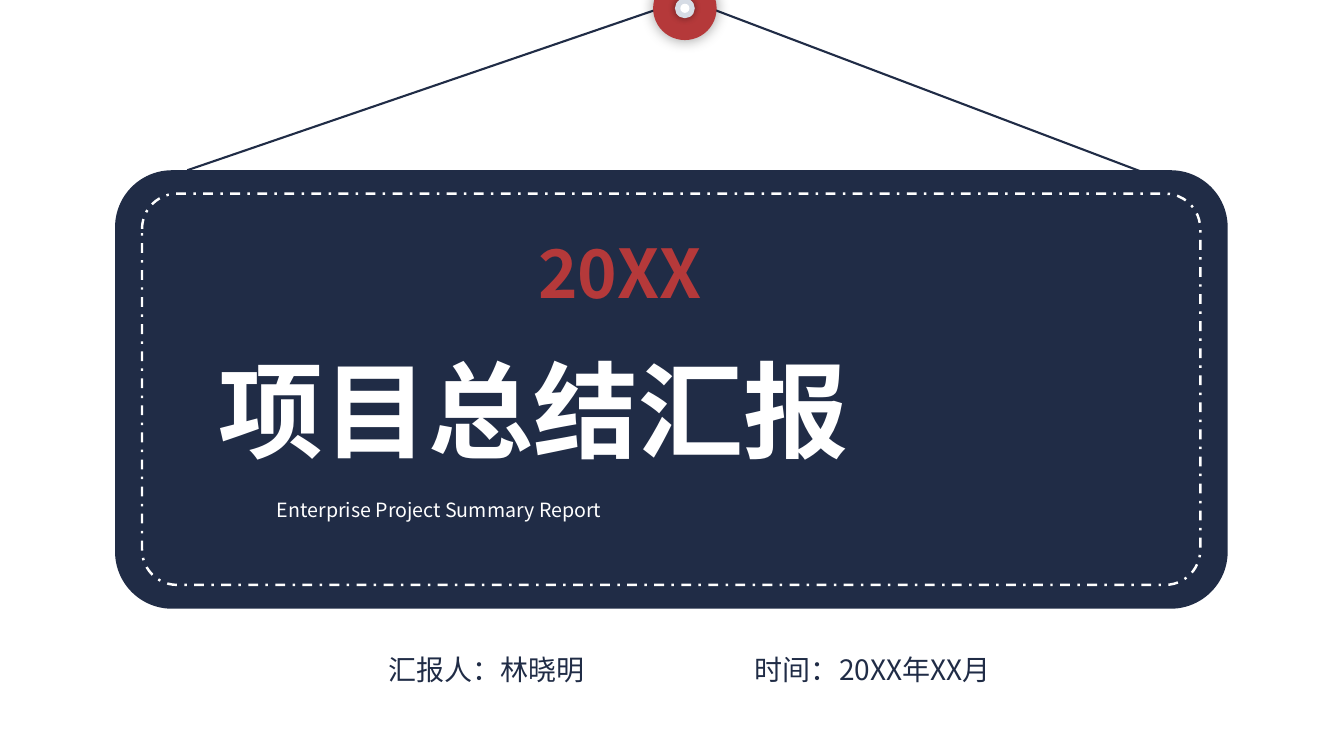
from lxml.etree import SubElement
from pptx import Presentation
from pptx.dml.color import RGBColor
from pptx.enum.dml import MSO_LINE
from pptx.enum.shapes import MSO_CONNECTOR, MSO_SHAPE
from pptx.enum.text import MSO_ANCHOR, MSO_AUTO_SIZE, PP_ALIGN
from pptx.oxml.ns import qn
from pptx.util import Cm, Pt

COLORS = {"navy": "202C46", "red": "B5393A", "white": "FFFFFF",
          "silver": "D6DCE5", "black": "000000"}


class Board:
    font = "Noto Sans CJK SC"

    def __init__(self, deck):
        self.page = deck.slides.add_slide(deck.slide_layouts[5])

    def color(self, name):
        return RGBColor.from_string(COLORS[name])

    def shape(self, kind, left, top, width, height, fill=None, radius=None):
        box = self.page.shapes.add_shape(
            kind, Cm(left), Cm(top), Cm(width), Cm(height))
        box.shadow.inherit = False
        box.line.fill.background()
        if fill:
            box.fill.solid()
            box.fill.fore_color.rgb = self.color(fill)
        else:
            box.fill.background()
        if radius:
            box.adjustments[0] = radius
        return box

    def outline(self, box, color, width, dash):
        box.line.color.rgb = self.color(color)
        box.line.width = Pt(width)
        box.line.dash_style = dash

    def glow(self, box, blur, opacity):
        effects = box.element.spPr.find(qn("a:effectLst"))
        shadow = SubElement(effects, qn("a:outerShdw"), blurRad=str(Pt(blur)),
                            dist="0", dir="0", algn="ctr", rotWithShape="0")
        tint = SubElement(shadow, qn("a:srgbClr"), val=COLORS["black"])
        SubElement(tint, qn("a:alpha"), val=str(opacity * 1000))

    def string(self, start, end):
        points = [Cm(value) for value in start + end]
        line = self.page.shapes.add_connector(MSO_CONNECTOR.STRAIGHT, *points)
        line.line.color.rgb = self.color("navy")
        line.line.width = Pt(1.5)
        SubElement(line.element.spPr, qn("a:effectLst"))

    def letter(self, box, text, size, color, bold=False,
               align=PP_ALIGN.JUSTIFY):
        frame = box.text_frame
        frame.word_wrap = True
        frame.auto_size = MSO_AUTO_SIZE.NONE
        frame.vertical_anchor = MSO_ANCHOR.MIDDLE
        frame.margin_top = frame.margin_bottom = 0
        para = frame.paragraphs[0]
        para.alignment = align
        span = para.add_run()
        span.text = text
        span.font.size = Pt(size)
        span.font.bold = bold
        span.font.color.rgb = self.color(color)
        span.font.name = self.font
        properties = span.font.fill._xPr
        SubElement(properties, qn("a:ea"), typeface=self.font)

    def label(self, left, top, width, height, *words, **style):
        box = self.page.shapes.add_textbox(
            Cm(left), Cm(top), Cm(width), Cm(height))
        self.letter(box, *words, **style)

    def title(self, left, top, width, height, *words, **style):
        box = self.page.shapes.title
        box.left, box.top = Cm(left), Cm(top)
        box.width, box.height = Cm(width), Cm(height)
        self.letter(box, *words, **style)
        return box


def main():
    deck = Presentation()
    deck.slide_width, deck.slide_height = Cm(33.87), Cm(19.05)
    board = Board(deck)

    board.shape(MSO_SHAPE.ROUNDED_RECTANGLE, 2.9, 4.29, 28.04, 11.05,
                "navy", 0.13)
    stitching = board.shape(MSO_SHAPE.ROUNDED_RECTANGLE,
                            3.58, 4.88, 26.67, 9.86, radius=0.09)
    board.outline(stitching, "white", 1.75, MSO_LINE.DASH_DOT)

    heading = board.title(5.26, 8.58, 23.34, 3.45,
                          "项目总结汇报", 75, "white", bold=True)
    stitching.element.addnext(heading.element)
    board.label(13.31, 5.7, 7.26, 2.31, "20XX", 48, "red", bold=True)
    board.label(6.73, 12.42, 20.37, 0.86,
                "Enterprise Project Summary Report", 14, "white")
    for left, width, text in ((7.95, 8.61, "汇报人：林晓明"),
                              (16.66, 10.67, "时间：20XX年XX月")):
        board.label(left, 16.31, width, 1.12, text, 20, "navy",
                    align=PP_ALIGN.CENTER)

    board.string((4.72, 4.29), (17.25, 0))
    board.string((17.35, 0), (28.75, 4.32))

    pin_x, pin_y = 17.26, 0.21
    for size, color, blur, opacity in ((1.6, "red", 10, 39),
                                       (0.5, "silver", 5, 40),
                                       (0.23, "white", 0, 0)):
        disc = board.shape(MSO_SHAPE.OVAL, pin_x - size / 2, pin_y - size / 2,
                           size, size, color)
        if blur:
            board.glow(disc, blur, opacity)

    deck.save("out.pptx")


if __name__ == "__main__":
    main()
